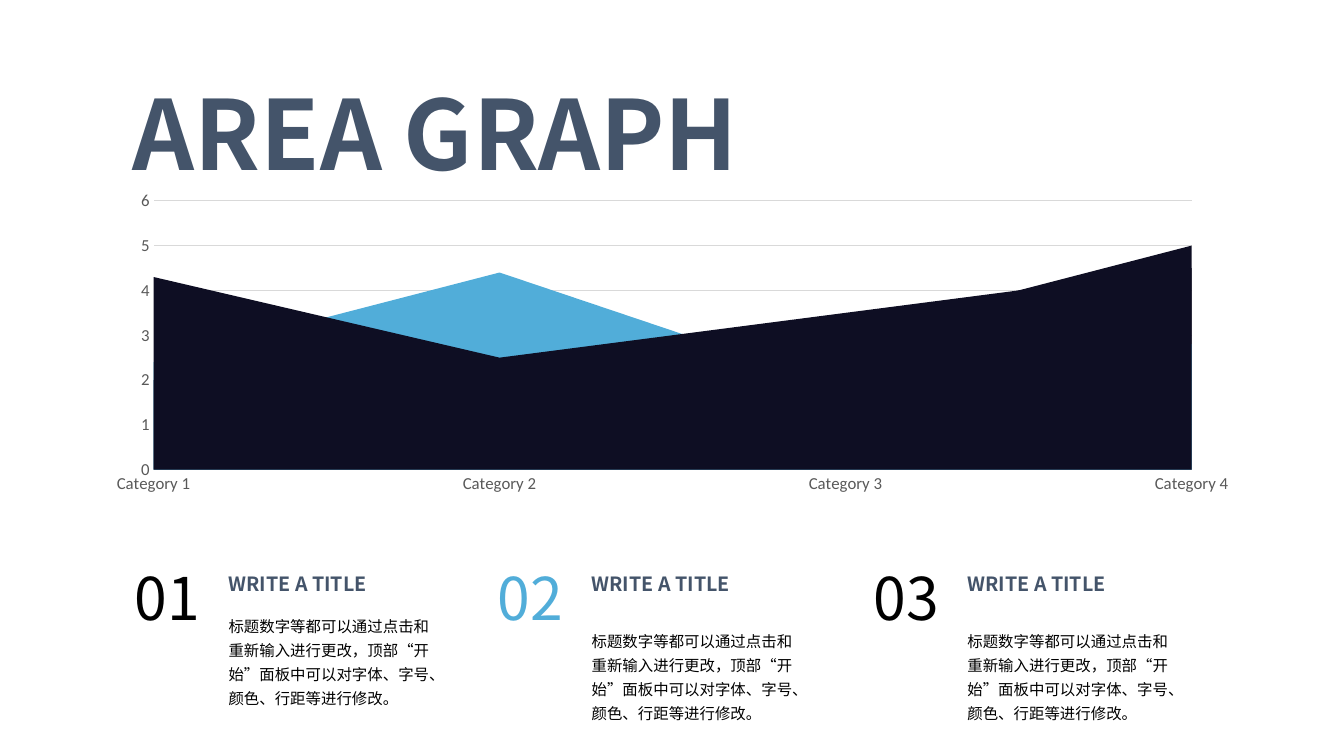
from dataclasses import dataclass

from lxml import etree
from pptx import Presentation
from pptx import util as u
from pptx.chart.data import CategoryChartData
from pptx.dml.color import RGBColor
from pptx.enum import chart as ch
from pptx.enum import text
from pptx.oxml.ns import qn


@dataclass(frozen=True)
class Theme:
    font: str = "Noto Sans CJK SC"
    chart_font: str = "Calibri"
    slate: str = "44546A"
    navy: str = "0E0E23"
    sky: str = "51ADD9"
    black: str = "000000"
    label: str = "595959"
    rule: str = "D9D9D9"
    title_size: float = 69
    number_size: float = 42
    heading_size: float = 14
    body_size: float = 11
    axis_size: float = 12


THEME = Theme()
BODY = "标题数字等都可以通过点击和重新输入进行更改，顶部“开始”面板中可以对字体、字号、颜色、行距等进行修改。"
CATEGORIES = ["Category 1", "Category 2", "Category 3", "Category 4"]
SERIES = [
    ("Series 1", (4.3, 2.5, 3.5, 4.5), THEME.navy),
    ("Series 2", (2.4, 4.4, 1.8, 2.8), THEME.sky),
    ("Series 3", (2, 2, 3, 5), THEME.navy),
]
NOTES = [
    ("01", 3.4, 15.29, THEME.black),
    ("02", 12.55, 15.67, THEME.sky),
    ("03", 22.02, 15.67, THEME.black),
]


def add_text(s, box, words, size, color, bold=False, spacing=None, wrap=True, inset=True):
    tf = s.shapes.add_textbox(*map(u.Cm, box)).text_frame
    tf.word_wrap = wrap
    tf.auto_size = text.MSO_AUTO_SIZE.NONE
    if not inset:
        tf.margin_left = tf.margin_right = tf.margin_top = tf.margin_bottom = 0
    p = tf.paragraphs[0]
    p.text = words
    if spacing:
        p.line_spacing = spacing
    p.font.size = u.Pt(size)
    p.font.bold = bold
    p.font.color.rgb = RGBColor.from_string(color)
    p.font.name = THEME.font
    props = p._p.pPr.find(qn("a:defRPr"))
    etree.SubElement(props, qn("a:ea")).set("typeface", THEME.font)


def add_title(s, box):
    add_text(s, box, "AREA GRAPH", THEME.title_size, THEME.slate, bold=True, wrap=False)


def style_line(line, color):
    line.color.rgb = RGBColor.from_string(color)
    line.width = u.Pt(0.75)


def add_area_chart(s, box):
    data = CategoryChartData()
    data.categories = CATEGORIES
    for name, values, _ in SERIES:
        data.add_series(name, values)
    chart = s.shapes.add_chart(ch.XL_CHART_TYPE.AREA, *map(u.Cm, box), data).chart
    chart.has_legend = False
    chart.has_title = False
    chart.font.name = THEME.chart_font
    chart.font.size = u.Pt(THEME.axis_size)
    chart.font.color.rgb = RGBColor.from_string(THEME.label)
    chart.plots[0].vary_by_categories = False
    for series, (_, _, color) in zip(chart.plots[0].series, SERIES):
        series.format.fill.solid()
        series.format.fill.fore_color.rgb = RGBColor.from_string(color)
        series.format.line.fill.background()
    category, value = chart.category_axis, chart.value_axis
    for axis in (category, value):
        axis.major_tick_mark = axis.minor_tick_mark = ch.XL_TICK_MARK.NONE
    category.has_major_gridlines = False
    style_line(category.format.line, THEME.rule)
    value.minimum_scale, value.maximum_scale, value.major_unit = 0, 6, 1
    value.has_major_gridlines = True
    style_line(value.major_gridlines.format.line, THEME.rule)
    value.format.line.fill.background()


def add_note(s, left, top, body_top, number, color):
    text_left = left + 2.11
    add_text(s, (left, top + 0.15, 1.93, 1.52), number, THEME.number_size, color, inset=False)
    add_text(s, (text_left, top, 6.5, 1.14), "WRITE A TITLE",
             THEME.heading_size, THEME.slate, bold=True, spacing=1.5)
    add_text(s, (text_left, body_top, 5.74, 2.69), BODY,
             THEME.body_size, THEME.black, spacing=1.3)


def main():
    prs = Presentation()
    prs.slide_width, prs.slide_height = u.Cm(33.87), u.Cm(19.05)
    s = prs.slides.add_slide(prs.slide_layouts[6])
    add_title(s, (3.1, 1.75, 17.17, 3.2))
    add_area_chart(s, (2.36, 4.65, 29.18, 7.95))
    for number, left, body_top, color in NOTES:
        add_note(s, left, 14, body_top, number, color)
    prs.save("out.pptx")


if __name__ == "__main__":
    main()
